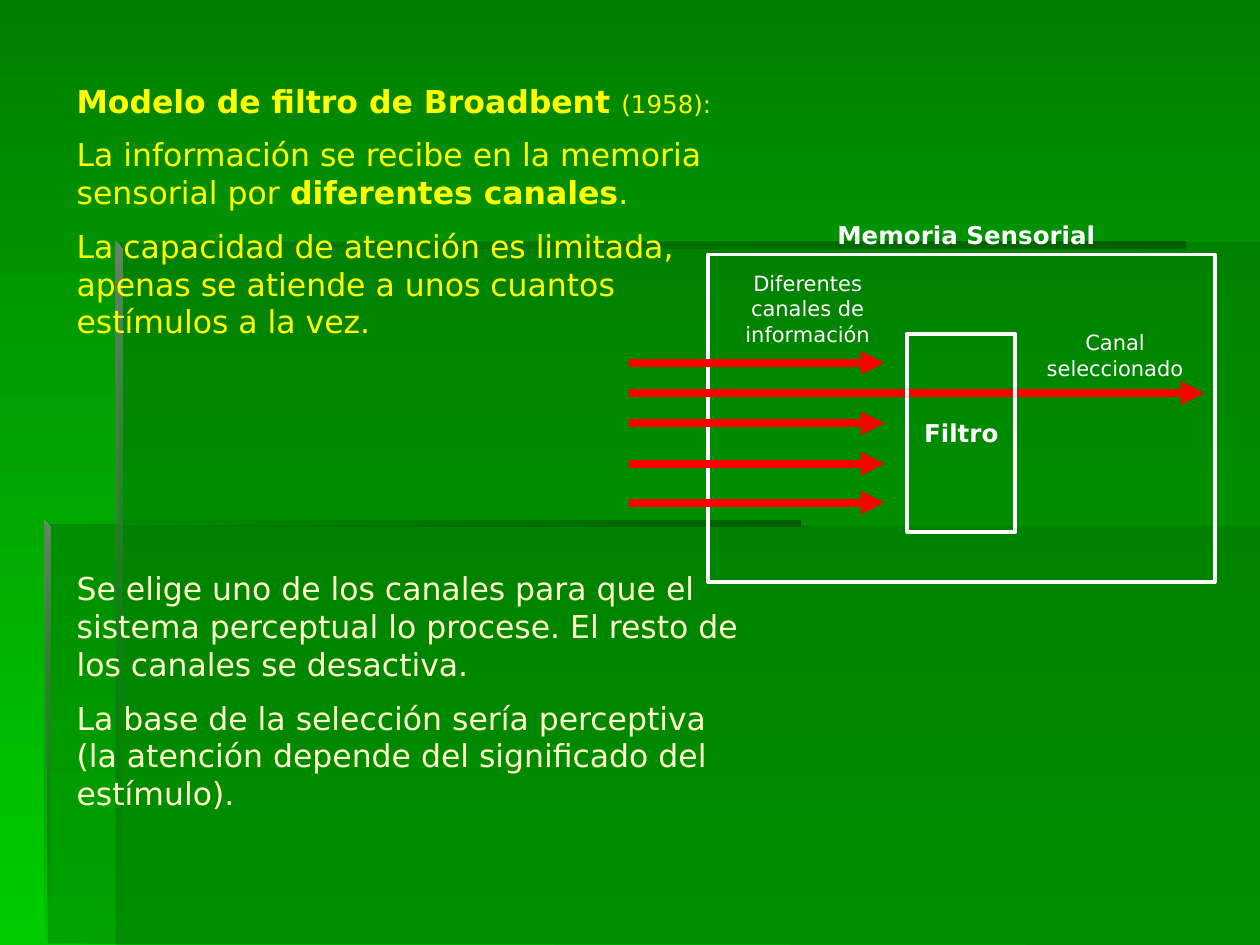
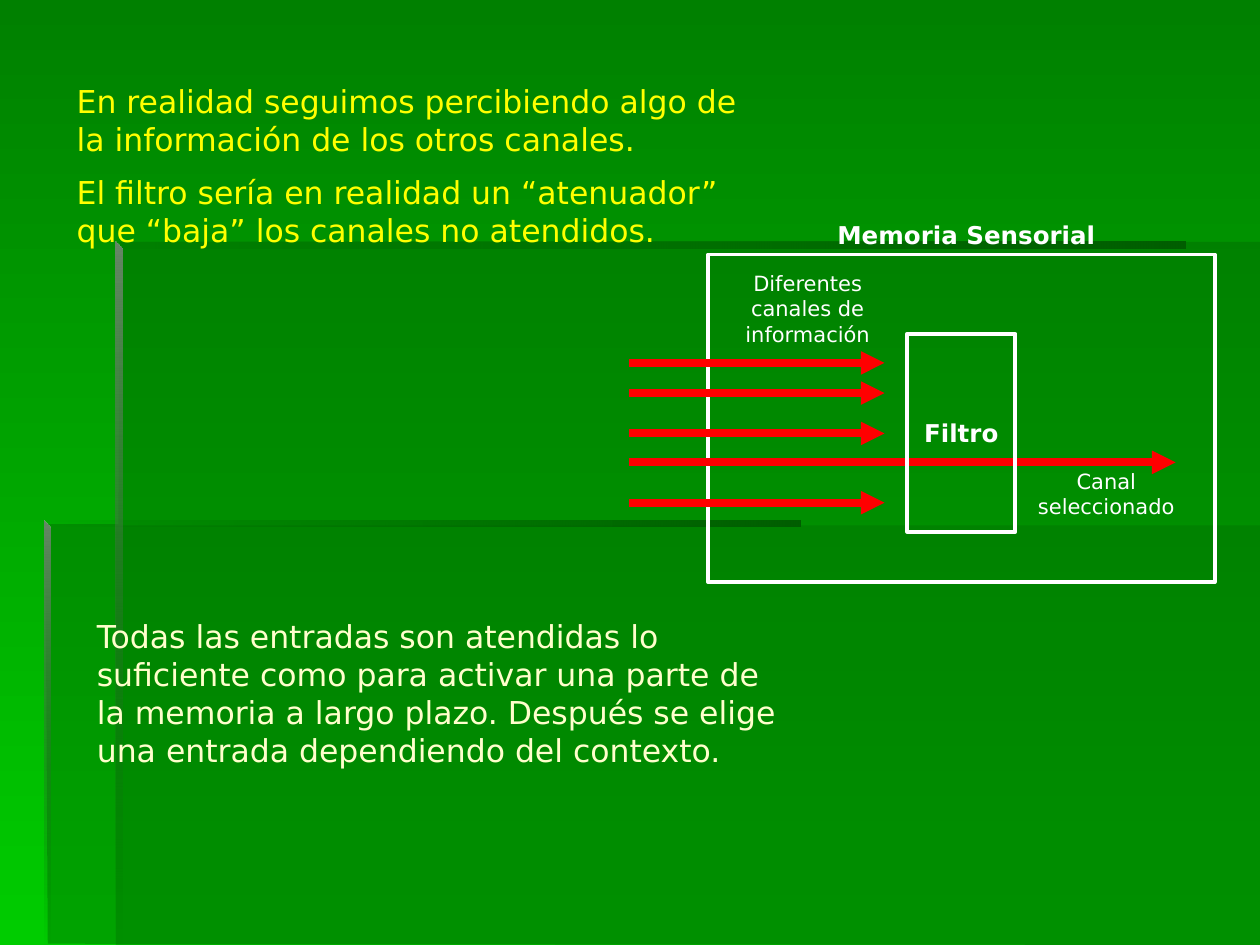
from dataclasses import dataclass
from pptx import Presentation
from pptx.dml.color import RGBColor as RGB
from pptx.enum.shapes import MSO_CONNECTOR as Link, MSO_SHAPE as Kind
from pptx.enum.text import MSO_ANCHOR as Anchor, MSO_AUTO_SIZE as Fit, PP_ALIGN as Align
from pptx.oxml.ns import qn
from pptx.util import Inches, Pt
from lxml.etree import SubElement as Sub


@dataclass(frozen=True)
class Theme:
    font: str = "DejaVu Sans"
    top: str = "008000"
    base: str = "00CC00"
    shade: str = "006600"
    edge: str = "005E00"
    glow: str = "668666"
    lead: str = "FFFF00"
    note: str = "FFFFCC"
    white: str = "FFFFFF"
    arrow: str = "FF0000"
    body: int = 18
    head: int = 14
    label: int = 12
    gap: int = 9
    frame: float = 2.25
    beam: float = 4.5


T = Theme()
DOWN, RIGHT = 270, 0

PANELS = [
    ([(0.95, 1.92), (0.94, 4.16), (0.36, 4.16), (0.38, 7.49), (10, 7.5), (10, 1.92)], 40),
    ([(0.92, 4.17), (0.92, 7.5), (10, 7.5), (10, 4.17)], 30),
]
BARS = [(0.35, 4.13, 6), (0.92, 1.92, 8.49)]
POSTS = [(0.35, 4.13, 3.4), (0.92, 1.92, 5.6)]

FRAME = (5.62, 2.02, 4.02, 2.6)
GATE = (7.2, 2.65, 0.86, 1.57)
START, STOP = 4.99, 7.02

SLIDES = [
    {
        "texts": [
            ((0.51, 0.6, 5.59, 6.57), [
                (T.lead, T.gap, [("Modelo de filtro de Broadbent ", True, T.body),
                                 ("(1958):", False, T.head)]),
                (T.lead, T.gap, [("La información se recibe en la memoria sensorial por ", False, T.body),
                                 ("diferentes canales", True, T.body), (".", False, T.body)]),
                (T.lead, T.gap, "La capacidad de atención es limitada, apenas se atiende "
                                "a unos cuantos estímulos a la vez."),
                (T.note, 131, "Se elige uno de los canales para que el sistema perceptual "
                              "lo procese. El resto de los canales se desactiva."),
                (T.note, T.gap, "La base de la selección sería perceptiva (la atención "
                                "depende del significado del estímulo)."),
            ]),
        ],
        "rows": [2.88, 3.12, 3.36, 3.68, 3.99],
        "pick": (3.12, 9.56),
        "tag": (8.06, 2.57, 1.58, 0.5),
    },
    {
        "texts": [
            ((0.51, 0.6, 5.59, 1.45), [
                (T.lead, T.gap, "En realidad seguimos percibiendo algo de la información "
                                "de los otros canales."),
                (T.lead, T.gap, "El filtro sería en realidad un “atenuador” que “baja” "
                                "los canales no atendidos."),
            ]),
            ((0.67, 4.85, 5.59, 1.6), [
                (T.note, T.gap, "Todas las entradas son atendidas lo suficiente como para "
                                "activar una parte de la memoria a largo plazo. Después se "
                                "elige una entrada dependiendo del contexto."),
            ]),
        ],
        "rows": [2.88, 3.12, 3.44, 3.67, 3.99],
        "pick": (3.67, 9.33),
        "tag": (7.99, 3.67, 1.58, 0.5),
    },
]


def rgb(hue):
    return RGB.from_string(hue)


def spot(box):
    return [Inches(v) for v in box]


def style(para, hue, size, bold=None):
    font = para.font
    font.name, font.size, font.bold = T.font, Pt(size), bold
    font.color.rgb = rgb(hue)


def blend(fill, first, last, angle):
    fill.gradient()
    fill.gradient_angle = angle
    for stop, hue in zip(fill.gradient_stops, (first, last)):
        stop.color.rgb = rgb(hue)


def fade(shape, index, pct):
    hues = list(shape.element.spPr.iter(qn("a:srgbClr")))
    Sub(hues[index], qn("a:alpha")).set("val", str(pct * 1000))


def outline(slide, points):
    dots = [spot(p) for p in points]
    pen = slide.shapes.build_freeform(*dots[0])
    pen.add_line_segments(dots[1:], close=True)
    shape = pen.convert_to_shape()
    shape.shadow.inherit = False
    shape.line.fill.background()
    return shape


def backdrop(slide, master):
    blend(master.background.fill, T.top, T.base, DOWN)
    made = []
    for points, pct in PANELS:
        panel = outline(slide, points)
        panel.fill.solid()
        panel.fill.fore_color.rgb = rgb(T.shade)
        fade(panel, 0, pct)
        made.append(panel)
    for x, y, w in BARS:
        bar = outline(slide, [(x, y), (x, y + 0.05), (x + w, y + 0.05), (x + w, y)])
        blend(bar.fill, T.shade, T.edge, RIGHT)
        fade(bar, 0, 0)
        made.append(bar)
    for x, y, h in POSTS:
        post = outline(slide, [(x, y), (x, y + h), (x + 0.05, y + h), (x + 0.05, y + 0.06)])
        blend(post.fill, T.glow, T.shade, DOWN)
        fade(post, 1, 0)
        made.append(post)
    for shape in made:
        master.shapes.element.append(shape.element)


def textbox(slide, box):
    frame = slide.shapes.add_textbox(*spot(box)).text_frame
    frame.word_wrap = True
    frame.auto_size = Fit.SHAPE_TO_FIT_TEXT
    return frame


def prose(slide, box, paras):
    frame = textbox(slide, box)
    for i, (hue, gap, parts) in enumerate(paras):
        para = frame.add_paragraph() if i else frame.paragraphs[0]
        para.space_before = Pt(gap)
        style(para, hue, T.body)
        if isinstance(parts, str):
            parts = [(parts, None, T.body)]
        for words, bold, size in parts:
            run = para.add_run()
            run.text = words
            run.font.bold = bold
            if size != T.body:
                run.font.size = Pt(size)


def label(slide, box, words, size, bold=None):
    para = textbox(slide, box).paragraphs[0]
    para.text = words
    para.alignment = Align.CENTER
    style(para, T.white, size, bold)


def frame_box(slide, box):
    shape = slide.shapes.add_shape(Kind.RECTANGLE, *spot(box))
    shape.shadow.inherit = False
    shape.fill.background()
    shape.line.color.rgb = rgb(T.white)
    shape.line.width = Pt(T.frame)
    return shape


def arrow(slide, y, end):
    line = slide.shapes.add_connector(Link.STRAIGHT, *spot((START, y, end, y)))
    line.line.color.rgb = rgb(T.arrow)
    line.line.width = Pt(T.beam)
    Sub(line.line._get_or_add_ln(), qn("a:tailEnd")).set("type", "triangle")
    Sub(line.element.spPr, qn("a:effectLst"))


def model(slide, rows, pick, tag):
    frame_box(slide, FRAME)
    label(slide, (5.62, 2.1, 1.58, 0.7), "Diferentes canales de información", T.label)
    row, end = pick
    for y in rows:
        arrow(slide, y, end if y == row else STOP)
    gate = frame_box(slide, GATE).text_frame
    gate.word_wrap = False
    gate.vertical_anchor = Anchor.MIDDLE
    para = gate.paragraphs[0]
    para.text = "Filtro"
    para.alignment = Align.CENTER
    style(para, T.white, T.head, True)
    label(slide, tag, "Canal seleccionado", T.label)
    label(slide, (6.49, 1.7, 2.36, 0.33), "Memoria Sensorial", T.head, True)


prs = Presentation()
prs.slide_width, prs.slide_height = spot((10, 7.5))
blank = prs.slide_layouts[6]
for i, data in enumerate(SLIDES):
    slide = prs.slides.add_slide(blank)
    if i == 0:
        backdrop(slide, prs.slide_master)
    first, *rest = data["texts"]
    prose(slide, *first)
    model(slide, data["rows"], data["pick"], data["tag"])
    for part in rest:
        prose(slide, *part)
prs.save("out.pptx")
